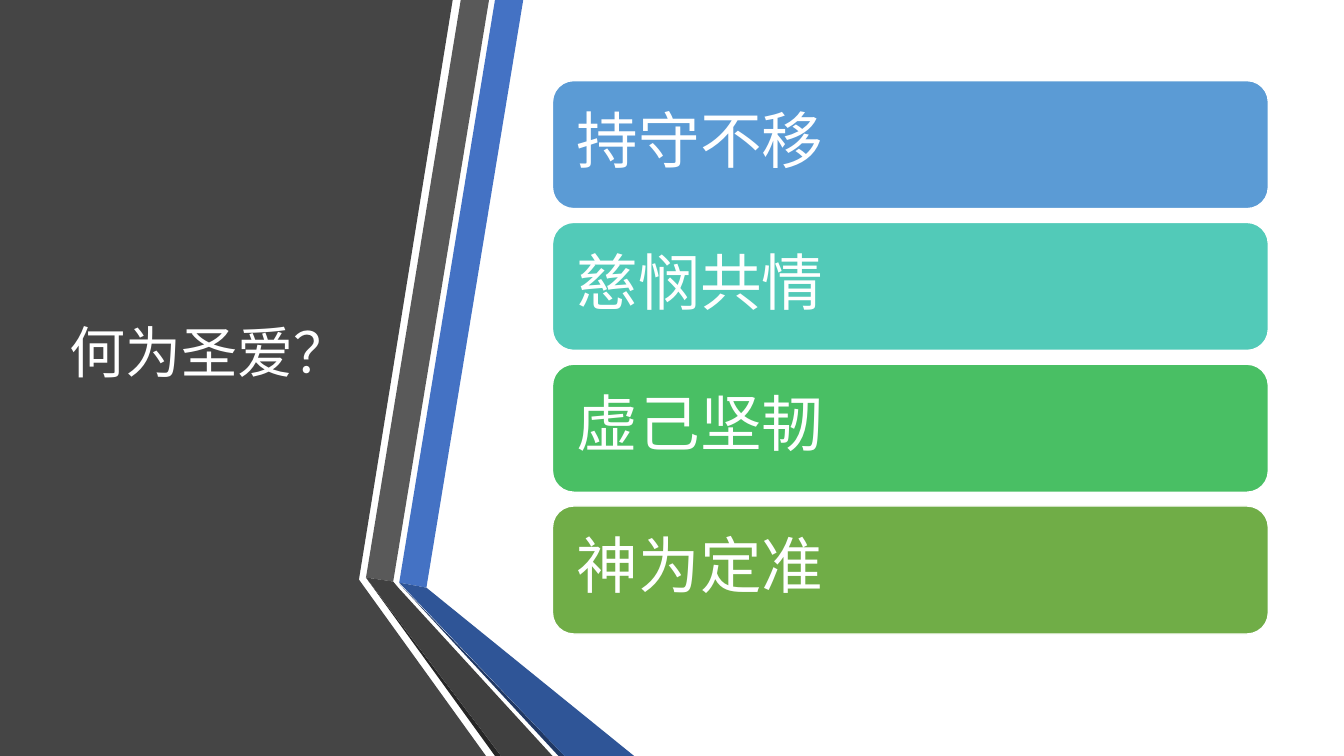
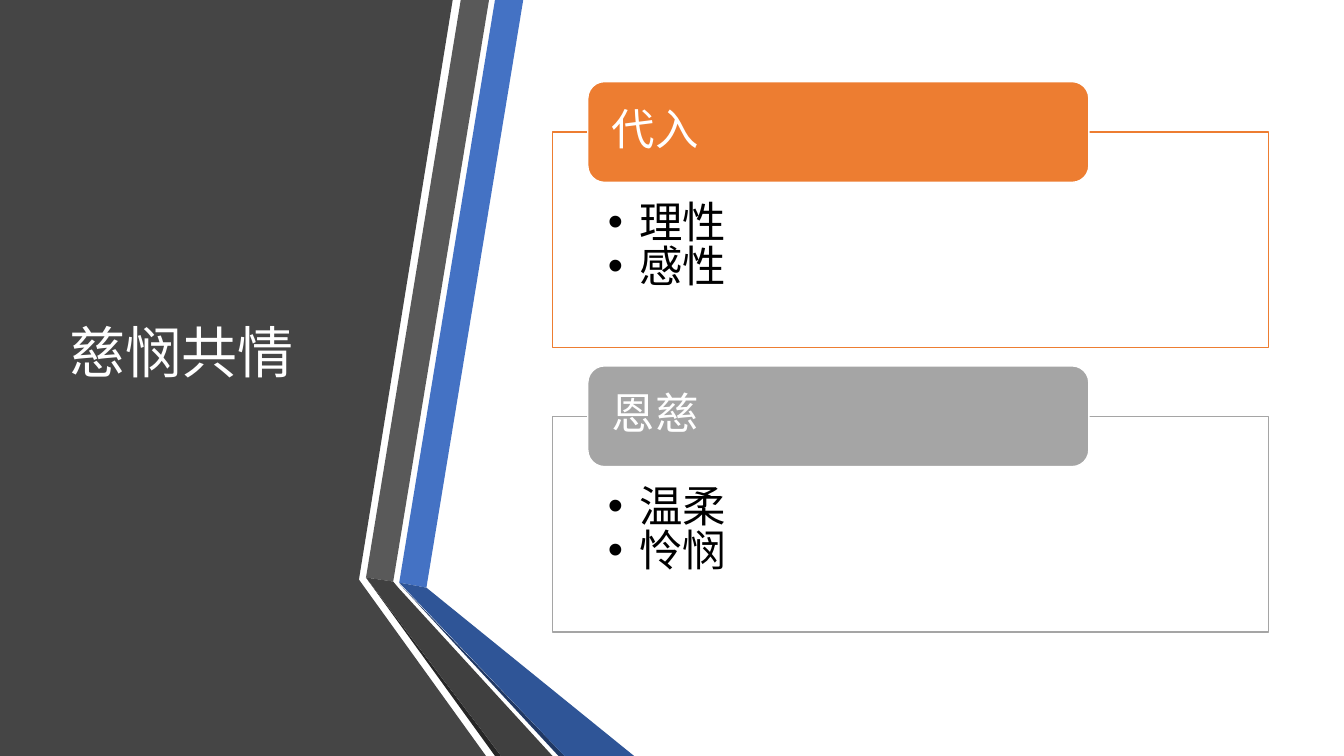
from dataclasses import dataclass

from lxml.etree import SubElement
from pptx import Presentation
from pptx.dml.color import RGBColor
from pptx.enum.shapes import MSO_SHAPE
from pptx.enum.text import MSO_ANCHOR, PP_ALIGN
from pptx.oxml.ns import qn
from pptx.util import Inches, Pt


@dataclass(frozen=True)
class Theme:
    font: str = "Noto Sans CJK SC"
    white: str = "FFFFFF"
    black: str = "000000"
    side: str = "454545"
    accent: str = "4472C4"
    accent_dark: str = "2F5597"
    accent_edge: str = "203864"
    gray: str = "595959"
    gray_dark: str = "404040"
    gray_edge: str = "262626"
    title_size: int = 40
    bar_size: int = 44
    body_size: int = 31
    line_spacing: float = 0.84


T = Theme()

LOVE_TITLE = "何为圣爱？"
LOVE_BARS = [
    ("持守不移", "5B9BD5"),
    ("慈悯共情", "52CAB8"),
    ("虚己坚韧", "49BF64"),
    ("神为定准", "70AD47"),
]
MERCY_TITLE = "慈悯共情"
MERCY_PANELS = [
    ("代入", "ED7D31", ["理性", "感性"]),
    ("恩慈", "A5A5A5", ["温柔", "怜悯"]),
]

BANDS = [
    (T.side, [(0, 0), (4.49, 0), (3.56, 5.75), (4.82, 7.5), (0, 7.5)]),
    (T.accent, [(3.96, 5.78), (4.23, 5.83), (5.19, 0), (4.91, 0)]),
    (T.gray, [(4.85, 0), (4.57, 0), (3.63, 5.73), (3.9, 5.77)]),
    (T.gray_edge, [(3.63, 5.73), (4.91, 7.5), (4.97, 7.5)]),
    (T.accent_edge, [(3.96, 5.79), (5.54, 7.5), (5.6, 7.5)]),
    (T.accent_dark, [(3.96, 5.78), (5.6, 7.5), (6.29, 7.5), (4.23, 5.83)]),
    (T.gray_dark, [(5.48, 7.5), (3.95, 5.83), (3.9, 5.77), (3.63, 5.73), (4.97, 7.5)]),
]

LEFT, WIDTH = 5.48, 7.1
BAR_TOP, BAR_BOTTOM, BAR_H = 0.8, 6.29, 1.27
PANEL_TOP, PANEL_H, PANEL_PITCH = 1.31, 2.14, 2.82
TAB_INDENT, TAB_W, TAB_H = 0.35, 4.97, 1


def paint(sp, fill, line=None):
    sp.shadow.inherit = False
    sp.fill.solid()
    sp.fill.fore_color.rgb = RGBColor.from_string(fill)
    if line:
        sp.line.color.rgb = RGBColor.from_string(line)
        sp.line.width = Pt(1)
    else:
        sp.line.fill.background()


def add_box(s, kind, at, fill, line):
    sp = s.shapes.add_shape(kind, *map(Inches, at))
    paint(sp, fill, line)
    return sp


def write(sp, lines, size, color, insets, anchor=MSO_ANCHOR.MIDDLE, bullet=False):
    tf = sp.text_frame
    tf.word_wrap = True
    tf.vertical_anchor = anchor
    tf.margin_left, tf.margin_top, tf.margin_right, tf.margin_bottom = map(Inches, insets)
    for i, text in enumerate(lines):
        p = tf.add_paragraph() if i else tf.paragraphs[0]
        p.alignment = PP_ALIGN.LEFT
        p.line_spacing = T.line_spacing
        if bullet:
            pPr = p._p.get_or_add_pPr()
            pPr.set("marL", str(Inches(0.31)))
            pPr.set("indent", str(-Inches(0.31)))
            SubElement(pPr, qn("a:buFont")).set("typeface", "Arial")
            SubElement(pPr, qn("a:buChar")).set("char", "•")
        r = p.add_run()
        r.text = text
        r.font.size = Pt(size)
        r.font.name = T.font
        r.font.color.rgb = RGBColor.from_string(color)
        SubElement(r._r.get_or_add_rPr(), qn("a:ea")).set("typeface", T.font)


def add_framed_slide(prs, title):
    s = prs.slides.add_slide(prs.slide_layouts[6])
    for color, points in BANDS:
        start, *rest = [(Inches(x), Inches(y)) for x, y in points]
        outline = s.shapes.build_freeform(*start)
        outline.add_line_segments(rest, close=True)
        paint(outline.convert_to_shape(), color)
    sp = s.shapes.add_textbox(*map(Inches, (0.59, 0.75, 3.04, 5.58)))
    write(sp, [title], T.title_size, T.white, (0.1, 0.05, 0.1, 0.05))
    return s


def add_bars(s, bars):
    pitch = (BAR_BOTTOM - BAR_TOP - BAR_H) / (len(bars) - 1)
    for i, (text, color) in enumerate(bars):
        at = (LEFT, BAR_TOP + i * pitch, WIDTH, BAR_H)
        sp = add_box(s, MSO_SHAPE.ROUNDED_RECTANGLE, at, color, T.white)
        write(sp, [text], T.bar_size, T.white, (0.18,) * 4)


def add_panels(s, panels):
    for i, (heading, color, items) in enumerate(panels):
        top = PANEL_TOP + i * PANEL_PITCH
        panel = add_box(s, MSO_SHAPE.RECTANGLE, (LEFT, top, WIDTH, PANEL_H), T.white, color)
        rgb = panel._element.spPr.find(qn("a:solidFill"))[0]
        SubElement(rgb, qn("a:alpha")).set("val", "90000")
        write(panel, items, T.body_size, T.black, (0.55, 0.71, 0.55, 0.24), MSO_ANCHOR.TOP, True)
        at = (LEFT + TAB_INDENT, top - TAB_H / 2, TAB_W, TAB_H)
        tab = add_box(s, MSO_SHAPE.ROUNDED_RECTANGLE, at, color, T.white)
        write(tab, [heading], T.body_size, T.white, (0.19, 0, 0.19, 0))


def main():
    prs = Presentation()
    prs.slide_width, prs.slide_height = Inches(13.33), Inches(7.5)
    add_bars(add_framed_slide(prs, LOVE_TITLE), LOVE_BARS)
    add_panels(add_framed_slide(prs, MERCY_TITLE), MERCY_PANELS)
    prs.save("out.pptx")


if __name__ == "__main__":
    main()
